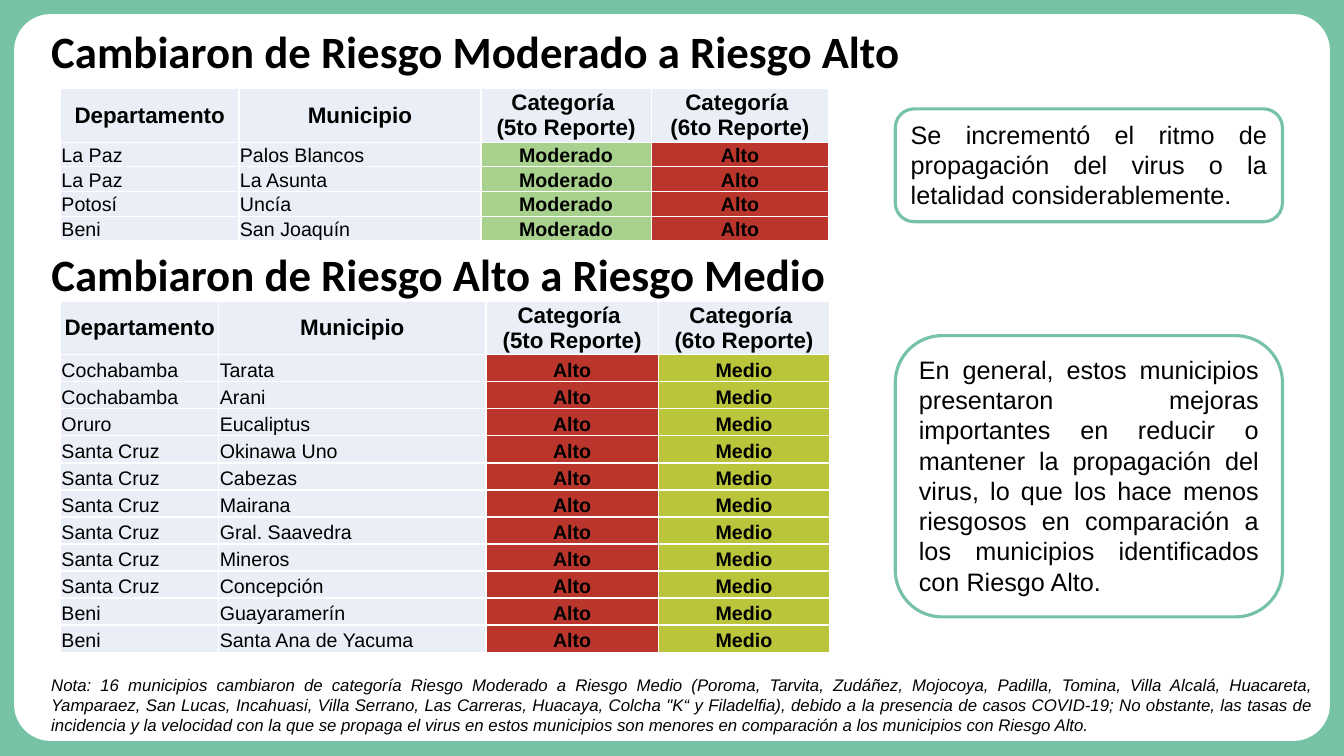
import pptx
import pptx.util
import pptx.dml.color
import pptx.enum.shapes
import pptx.enum.text
import pptx.oxml
import pptx.oxml.ns
from pptx.util import Inches

ALIGN = pptx.enum.text.PP_ALIGN
ANCHOR = pptx.enum.text.MSO_ANCHOR
ROUNDED = pptx.enum.shapes.MSO_SHAPE.ROUNDED_RECTANGLE

COLORS = {
    "frame": "76C2A5", "panel": "FFFFFF", "text": "000000", "border": "FFFFFF",
    "cell": "EAEFF7", "Moderado": "A9D18E", "Alto": "BA362C", "Medio": "BBC53B",
}

# Font formats
HEADING = {"name": "Calibri", "size": pptx.util.Pt(32), "bold": True}
HEADER = {"name": "Arial", "size": pptx.util.Pt(16), "bold": True}
PLACE = {"name": "Arial", "size": pptx.util.Pt(14), "bold": False}
RISK = {"name": "Arial", "size": pptx.util.Pt(14), "bold": True}
COMMENT = {"name": "Arial", "size": pptx.util.Pt(18)}
NOTE = {"name": "Arial", "size": pptx.util.Pt(12), "italic": True}

# Table contents
HEADERS = ["Departamento", "Municipio", "Categoría \n(5to Reporte)", "Categoría \n(6to Reporte)"]
HEADER_HEIGHT = 0.53
RAISED = [
    ("La Paz", "Palos Blancos"), ("La Paz", "La Asunta"),
    ("Potosí", "Uncía"), ("Beni", "San Joaquín"),
]
LOWERED = [
    ("Cochabamba", "Tarata"), ("Cochabamba", "Arani"), ("Oruro", "Eucaliptus"),
    ("Santa Cruz", "Okinawa Uno"), ("Santa Cruz", "Cabezas"), ("Santa Cruz", "Mairana"),
    ("Santa Cruz", "Gral. Saavedra"), ("Santa Cruz", "Mineros"),
    ("Santa Cruz", "Concepción"), ("Beni", "Guayaramerín"), ("Beni", "Santa Ana de Yacuma"),
]

RAISED_COMMENT = "Se incrementó el ritmo de propagación del virus o la letalidad considerablemente."
LOWERED_COMMENT = (
    "En general, estos municipios presentaron mejoras importantes en reducir o mantener "
    "la propagación del virus, lo que los hace menos riesgosos en comparación a los "
    "municipios identificados con Riesgo Alto."
)
NOTE_TEXT = (
    "Nota: 16 municipios cambiaron de categoría Riesgo Moderado a Riesgo Medio (Poroma, "
    "Tarvita, Zudáñez, Mojocoya, Padilla, Tomina, Villa Alcalá, Huacareta, Yamparaez, "
    "San Lucas, Incahuasi, Villa Serrano, Las Carreras, Huacaya, Colcha \"K“ y Filadelfia), "
    "debido a la presencia de casos COVID-19; No obstante, las tasas de incidencia y la "
    "velocidad con la que se propaga el virus en estos municipios son menores en "
    "comparación a los municipios con Riesgo Alto."
)


def rgb(name):
    return pptx.dml.color.RGBColor.from_string(COLORS[name])


def set_fill(target, name):
    target.fill.solid()
    target.fill.fore_color.rgb = rgb(name)


def write(text_frame, text, font_format, alignment, line_spacing=None):
    text_frame.text = text
    for paragraph in text_frame.paragraphs:
        paragraph.alignment = alignment
        paragraph.line_spacing = line_spacing
        for run in paragraph.runs:
            for key, value in font_format.items():
                setattr(run.font, key, value)
            run.font.color.rgb = rgb("text")


def set_frame(text_frame, anchor):
    values = {
        "word_wrap": True,
        "auto_size": pptx.enum.text.MSO_AUTO_SIZE.NONE,
        "vertical_anchor": anchor,
    }
    for key, value in values.items():
        setattr(text_frame, key, value)


def place(shape, box):
    for key, value in zip(("left", "top", "width", "height"), box):
        setattr(shape, key, Inches(value))


def format_heading(shape, text, box):
    place(shape, box)
    set_frame(shape.text_frame, ANCHOR.MIDDLE)
    write(shape.text_frame, text, HEADING, ALIGN.LEFT, 0.9)


def add_text_box(slide, box):
    return slide.shapes.add_textbox(*map(Inches, box))


def add_rounded(slide, box):
    shape = slide.shapes.add_shape(ROUNDED, *map(Inches, box))
    shape.shadow.inherit = False
    return shape


def add_comment(slide, text, box):
    shape = add_rounded(slide, box)
    shape.fill.background()
    shape.line.color.rgb = rgb("frame")
    shape.line.width = pptx.util.Pt(2.25)
    set_frame(shape.text_frame, ANCHOR.TOP)
    write(shape.text_frame, text, COMMENT, ALIGN.JUSTIFY)


def add_borders(cell):
    properties = cell._tc.get_or_add_tcPr()
    for side in ("lnL", "lnR", "lnT", "lnB"):
        properties.append(pptx.oxml.parse_xml(
            f'<a:{side} {pptx.oxml.ns.nsdecls("a")} w="12700"><a:solidFill>'
            f'<a:srgbClr val="{COLORS["border"]}"/></a:solidFill></a:{side}>'))


def fill_cell(cell, text, fill, font_format, alignment, anchor, margin):
    add_borders(cell)
    set_fill(cell, fill)
    for side in ("left", "right", "top"):
        setattr(cell, f"margin_{side}", Inches(margin))
    cell.margin_bottom = 0
    cell.vertical_anchor = anchor
    write(cell.text_frame, text, font_format, alignment)


def add_risk_table(slide, box, widths, places, before, after):
    rows = len(places) + 1
    table = slide.shapes.add_table(rows, len(widths), *map(Inches, box)).table
    for column, width in zip(table.columns, widths):
        column.width = Inches(width)
    row_height = (box[3] - HEADER_HEIGHT) / len(places)
    for index, row in enumerate(table.rows):
        row.height = Inches(row_height if index else HEADER_HEIGHT)

    for column, text in enumerate(HEADERS):
        fill_cell(table.cell(0, column), text, "cell", HEADER, ALIGN.CENTER, ANCHOR.MIDDLE, 0)
    for row, names in enumerate(places, 1):
        for column, text in enumerate((*names, before, after)):
            if column < 2:
                style = ("cell", PLACE, ALIGN.LEFT)
            else:
                style = (text, RISK, ALIGN.CENTER)
            fill_cell(table.cell(row, column), text, *style, ANCHOR.BOTTOM, 0.01)


def main():
    presentation = pptx.Presentation()
    presentation.slide_width = Inches(13.33)
    presentation.slide_height = Inches(7.5)
    slide = presentation.slides.add_slide(presentation.slide_layouts[5])

    # Green frame around a white panel
    set_fill(slide.background, "frame")
    panel = add_rounded(slide, (0.14, 0.14, 13.05, 7.21))
    panel.adjustments[0] = 0.05
    set_fill(panel, "panel")
    panel.line.fill.background()
    slide.shapes._spTree.insert(2, panel._element)

    # Municipalities that moved down to medium risk
    format_heading(slide.shapes.title, "Cambiaron de Riesgo Alto a Riesgo Medio",
                   (0.41, 2.51, 11.5, 0.48))
    add_comment(slide, LOWERED_COMMENT, (8.88, 3.33, 3.84, 2.79))
    add_risk_table(slide, (0.6, 2.99, 7.62, 3.48), (1.57, 2.65, 1.71, 1.7),
                   LOWERED, "Alto", "Medio")

    # Municipalities that moved up to high risk
    raised_box = (0.41, 0.28, 8.67, 0.52)
    format_heading(add_text_box(slide, raised_box),
                   "Cambiaron de Riesgo Moderado a Riesgo Alto", raised_box)
    add_comment(slide, RAISED_COMMENT, (8.88, 1.08, 3.84, 1.12))
    add_risk_table(slide, (0.6, 0.88, 7.62, 1.51), (1.77, 2.4, 1.69, 1.76),
                   RAISED, "Moderado", "Alto")

    # Footnote
    note = add_text_box(slide, (0.41, 6.64, 12.72, 0.71))
    set_frame(note.text_frame, ANCHOR.TOP)
    write(note.text_frame, NOTE_TEXT, NOTE, ALIGN.JUSTIFY)

    presentation.save("out.pptx")


if __name__ == "__main__":
    main()
